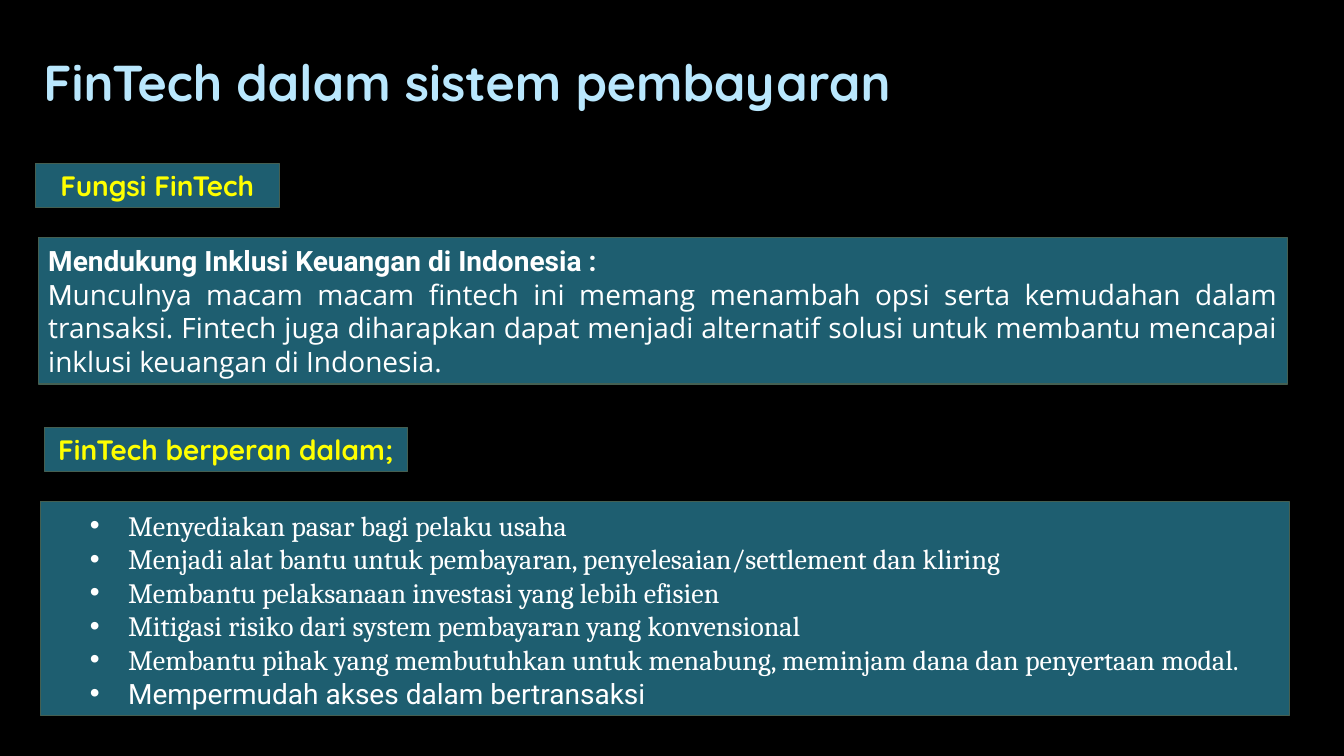
"""Build a slide on the role of FinTech in payment systems."""
import pptx
import pptx.dml.color
import pptx.enum.shapes
import pptx.enum.text
import pptx.util
from lxml import etree
from pptx.util import Inches

COLORS = {"background": "000000", "title": "B9E7FD", "panel": "1E5E70",
          "border": "455F51", "label": "FFFF00", "body": "FFFFFF"}
ALIGN = pptx.enum.text.PP_ALIGN
ANCHOR = pptx.enum.text.MSO_ANCHOR

TITLE = "FinTech dalam sistem pembayaran"
LABELS = [
    ("Fungsi FinTech", (0.35, 1.62, 2.42, 0.44)),
    ("FinTech berperan dalam;", (0.44, 4.24, 3.6, 0.44)),
]
FUNCTION_BOX = (0.38, 2.36, 12.39, 1.45)
FUNCTION_HEADING = "Mendukung Inklusi Keuangan di Indonesia :"
FUNCTION_TEXT = [
    ("M", "Roboto"),
    ("unculnya macam macam fintech ini memang menambah opsi serta kemudahan "
     "dalam transaksi. Fintech juga diharapkan dapat menjadi alternatif solusi "
     "untuk membantu mencapai inklusi keuangan di Indonesia.", "Open Sans"),
]
ROLES_BOX = (0.4, 4.98, 12.39, 2.12)
ROLES = [
    ("Menyediakan pasar bagi pelaku usaha", "Cambria"),
    ("Menjadi alat bantu untuk pembayaran, penyelesaian/settlement dan kliring", "Cambria"),
    ("Membantu pelaksanaan investasi yang lebih efisien", "Cambria"),
    ("Mitigasi risiko dari system pembayaran yang konvensional", "Cambria"),
    ("Membantu pihak yang membutuhkan untuk menabung, meminjam dana dan "
     "penyertaan modal.", "Cambria"),
    ("Mempermudah akses dalam bertransaksi", "Roboto"),
]


def rgb(name):
    return pptx.dml.color.RGBColor.from_string(COLORS[name])


def add_paragraph(frame, pieces, color, align, bold=False, size=20, bullet=False):
    """Append a paragraph of (text, font name) pieces, reusing an empty first one."""
    paragraph = frame.paragraphs[0] if not frame.text else frame.add_paragraph()
    paragraph.alignment = align
    if bullet:
        properties = paragraph._p.get_or_add_pPr()
        properties.set("marL", str(Inches(0.38)))
        properties.set("indent", str(Inches(-0.38)))
        for tag, key, value in (("buFont", "typeface", "Arial"), ("buChar", "char", "•")):
            etree.SubElement(properties, pptx.oxml.ns.qn("a:" + tag)).set(key, value)
    for text, font_name in pieces:
        run = paragraph.add_run()
        run.text = text
        run.font.name = font_name
        run.font.size = pptx.util.Pt(size)
        run.font.bold = bold
        run.font.color.rgb = rgb(color)
    return paragraph


def add_panel(slide, box):
    """Add a bordered panel and return its text frame."""
    shape = slide.shapes.add_shape(
        pptx.enum.shapes.MSO_SHAPE.RECTANGLE, *map(Inches, box))
    shape.shadow.inherit = False
    shape.fill.solid()
    shape.fill.fore_color.rgb = rgb("panel")
    shape.line.color.rgb = rgb("border")
    shape.line.width = pptx.util.Pt(0.75)
    frame = shape.text_frame
    frame.word_wrap = True
    frame.vertical_anchor = ANCHOR.MIDDLE
    return frame


def main():
    presentation = pptx.Presentation()
    presentation.slide_width = Inches(13.33)
    presentation.slide_height = Inches(7.5)
    slide = presentation.slides.add_slide(presentation.slide_layouts[5])
    slide.background.fill.solid()
    slide.background.fill.fore_color.rgb = rgb("background")

    title = slide.shapes.title
    title.left, title.top, title.width, title.height = map(
        Inches, (0.33, 0.42, 13.17, 0.75))
    title.text_frame.vertical_anchor = ANCHOR.BOTTOM
    heading = add_paragraph(title.text_frame, [(TITLE, "Quicksand")], "title",
                            ALIGN.LEFT, bold=True, size=36)
    heading.line_spacing = 0.9

    roles = add_panel(slide, ROLES_BOX)
    roles.margin_left = Inches(0.49)
    for role in ROLES:
        add_paragraph(roles, [role], "body", ALIGN.LEFT, bullet=True)

    for text, box in LABELS:
        label = add_panel(slide, box)
        label.word_wrap = False
        add_paragraph(label, [(text, "Quicksand")], "label", ALIGN.CENTER, bold=True)

    function = add_panel(slide, FUNCTION_BOX)
    add_paragraph(function, [(FUNCTION_HEADING, "Roboto")], "body", ALIGN.JUSTIFY, bold=True)
    add_paragraph(function, FUNCTION_TEXT, "body", ALIGN.JUSTIFY)

    presentation.save("out.pptx")


if __name__ == "__main__":
    main()
